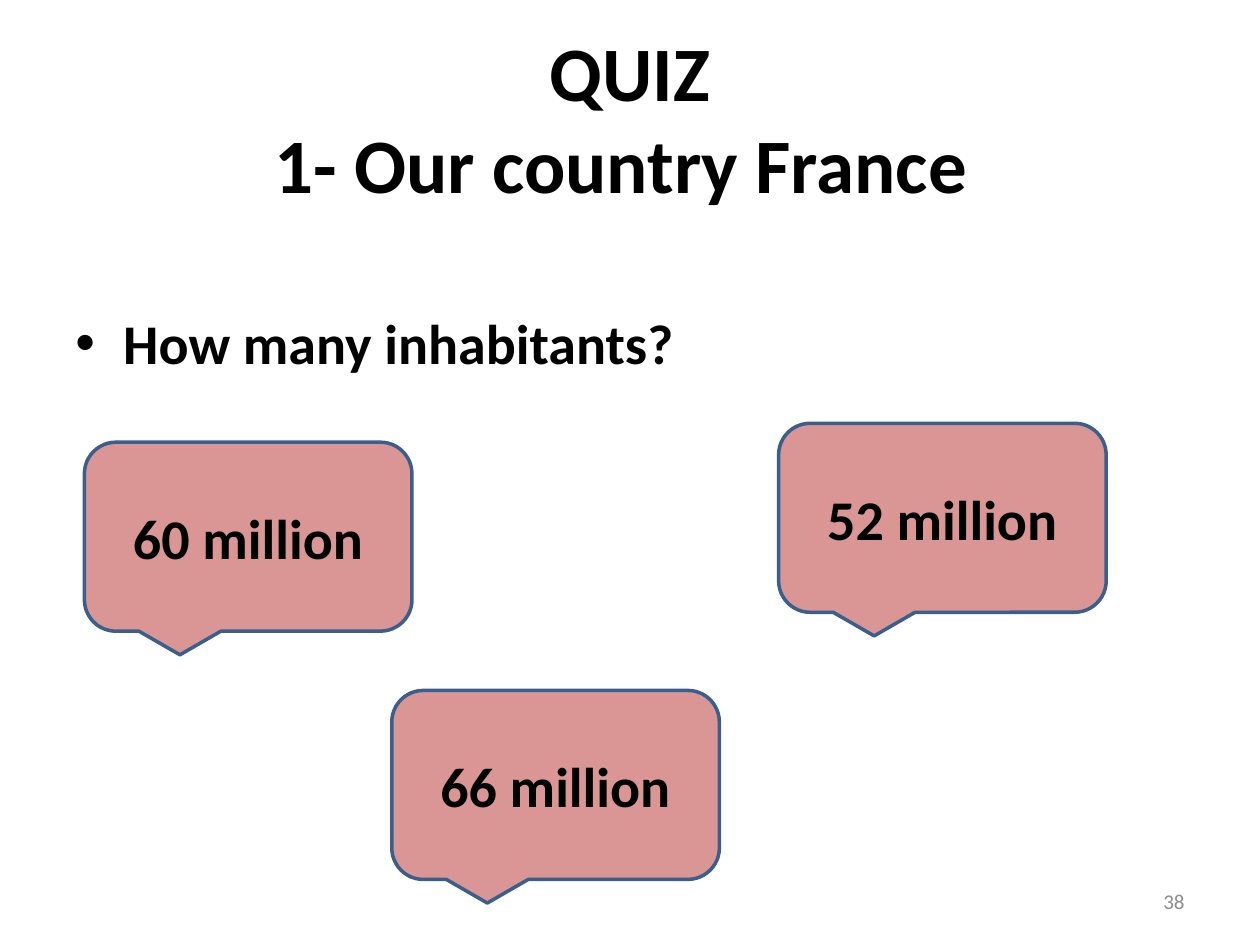
from lxml import etree
from pptx import Presentation
from pptx.dml.color import RGBColor as RGB
from pptx.enum.shapes import MSO_SHAPE as Shape
from pptx.enum.text import MSO_ANCHOR as Anchor, MSO_AUTO_SIZE as Fit, PP_ALIGN as Align
from pptx.oxml.ns import qn
from pptx.util import Inches, Pt

COLORS = {"ink": "000000", "rose": "D99694", "edge": "3A5F8C", "gray": "8C8C8C"}


def color(name):
    return RGB.from_string(COLORS[name])


class Deck:
    font = "Calibri"

    def __init__(self, width, height):
        self.prs = Presentation()
        self.prs.slide_width = Inches(width)
        self.prs.slide_height = Inches(height)
        self.slide = None

    def add_slide(self):
        self.slide = self.prs.slides.add_slide(self.prs.slide_layouts[5])

    def set_text(self, shape, text, size, align=Align.CENTER, bold=True, ink="ink"):
        frame = shape.text_frame
        frame.text = text
        setup = {"word_wrap": True, "auto_size": Fit.NONE,
                 "vertical_anchor": Anchor.MIDDLE}
        for key, value in setup.items():
            setattr(frame, key, value)
        para = frame.paragraphs[0]
        para.alignment = align
        style = {"name": self.font, "size": Pt(size), "bold": bold}
        for run in para.runs:
            for key, value in style.items():
                setattr(run.font, key, value)
            run.font.color.rgb = color(ink)
        return para

    def title(self, text, box):
        shape = self.slide.shapes.title
        for key, value in zip(("left", "top", "width", "height"), box):
            setattr(shape, key, Inches(value))
        self.set_text(shape, text, 44)

    def label(self, text, box, size, **style):
        shape = self.slide.shapes.add_textbox(*map(Inches, box))
        return self.set_text(shape, text, size, **style)

    def bullet(self, text, box):
        para = self.label(text, box, 32, align=Align.LEFT)
        props = para._p.get_or_add_pPr()
        hang = Inches(0.38)
        props.set("marL", str(hang))
        props.set("indent", str(-hang))
        etree.SubElement(props, qn("a:buFont"), typeface="Arial")
        etree.SubElement(props, qn("a:buChar"), char="•")

    def callout(self, text, left, top):
        shape = self.slide.shapes.add_shape(
            Shape.ROUNDED_RECTANGULAR_CALLOUT,
            *map(Inches, (left, top, 2.6, 1.5)))
        shape.shadow.inherit = False
        shape.fill.solid()
        shape.fill.fore_color.rgb = color("rose")
        shape.line.color.rgb = color("edge")
        shape.line.width = Pt(2)
        self.set_text(shape, text, 32)


def main():
    deck = Deck(10, 7.5)
    deck.add_slide()

    # Heading and question
    deck.title("QUIZ\v1- Our country France ", (0.5, 0.3, 9, 1.25))
    deck.bullet("How many inhabitants?", (0.5, 2.39, 9, 0.65))

    # Possible answers
    answers = [("60 million", 0.67, 3.51),
               ("52 million", 6.18, 3.36),
               ("66 million", 3.11, 5.48)]
    for answer in answers:
        deck.callout(*answer)

    # Page number
    deck.label("38", (7.17, 6.95, 2.33, 0.4), 12,
               align=Align.RIGHT, bold=False, ink="gray")

    deck.prs.save("out.pptx")


if __name__ == "__main__":
    main()
